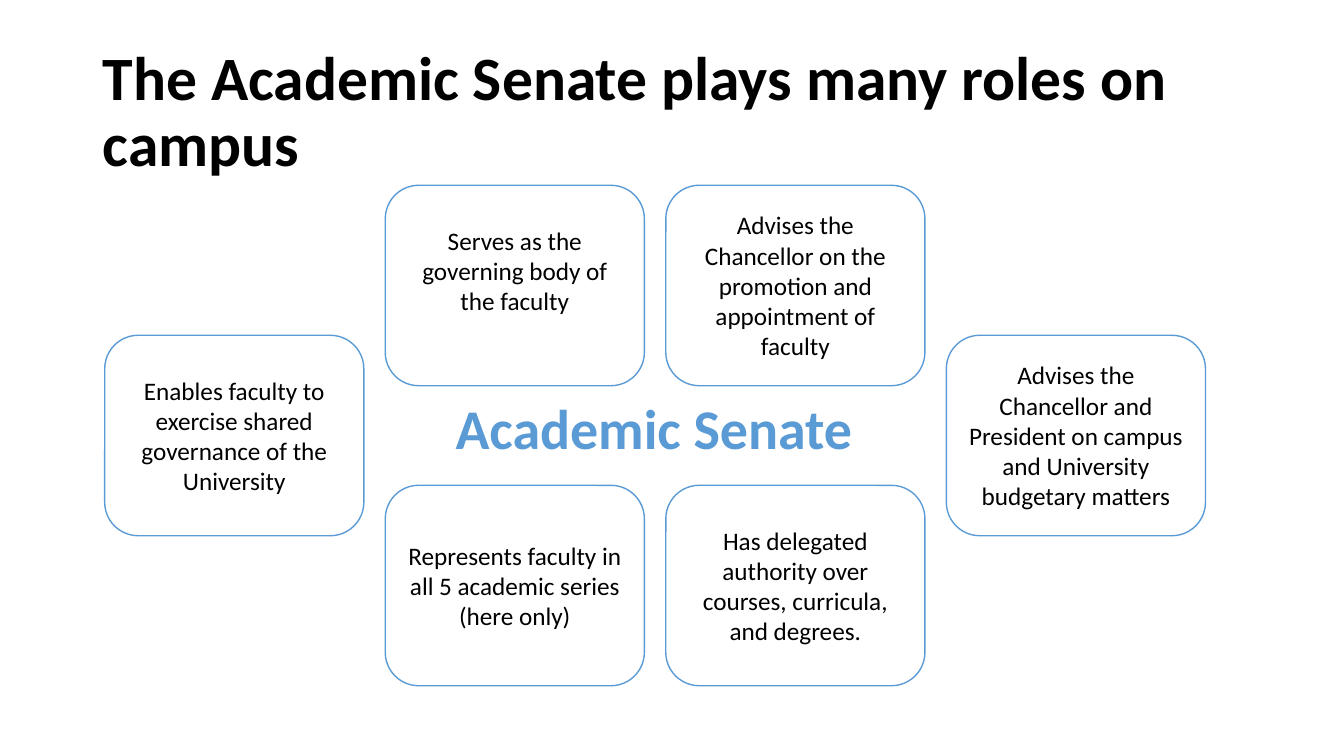
from dataclasses import dataclass

from pptx import Presentation
from pptx.dml.color import RGBColor
from pptx.enum.shapes import MSO_SHAPE
from pptx.enum.text import MSO_ANCHOR, PP_ALIGN
from pptx.shapes.autoshape import Shape
from pptx.slide import Slide
from pptx.util import Cm, Pt

BLACK = RGBColor(0x00, 0x00, 0x00)
WHITE = RGBColor(0xFF, 0xFF, 0xFF)
BLUE = RGBColor(0x5B, 0x9B, 0xD5)
FONT = "Calibri"

GRID_LEFT, GRID_TOP = 2.64, 4.67
COL_STEP, ROW_STEP = 7.07, 3.78
BOX_WIDTH, BOX_HEIGHT = 6.53, 5.05


@dataclass(frozen=True)
class Role:
    col: int
    row: int
    text: str
    bottom_inset: float = 0.13


ROLES = [
    Role(0, 1, "Enables faculty to exercise shared governance of the University"),
    Role(2, 0, "Advises the Chancellor on the promotion and appointment of faculty"),
    Role(2, 2, "Has delegated authority over courses, curricula, and degrees."),
    Role(3, 1, "Advises the Chancellor and President on campus and University budgetary matters"),
    Role(1, 2, "Represents faculty in all 5 academic series (here only)"),
    Role(1, 0, "Serves as the governing body of the faculty", bottom_inset=0.89),
]


def set_text(sp: Shape, text: str, *, size: float, color: RGBColor = BLACK,
             bold: bool = False, align: PP_ALIGN = PP_ALIGN.CENTER,
             anchor: MSO_ANCHOR = MSO_ANCHOR.MIDDLE, spacing: float = 1.0) -> None:
    tf = sp.text_frame
    tf.word_wrap = True
    tf.vertical_anchor = anchor
    p = tf.paragraphs[0]
    p.alignment = align
    p.line_spacing = spacing
    r = p.add_run()
    r.text = text
    r.font.name = FONT
    r.font.size = Pt(size)
    r.font.bold = bold
    r.font.color.rgb = color


def add_title(s: Slide) -> None:
    sp = s.shapes.add_textbox(Cm(2.34), Cm(1.02), Cm(29.21), Cm(3.68))
    set_text(sp, "The Academic Senate plays many roles on campus",
             size=44, bold=True, align=PP_ALIGN.LEFT, spacing=0.9)


def add_role(s: Slide, role: Role) -> None:
    sp = s.shapes.add_shape(
        MSO_SHAPE.ROUNDED_RECTANGLE,
        Cm(GRID_LEFT + role.col * COL_STEP), Cm(GRID_TOP + role.row * ROW_STEP),
        Cm(BOX_WIDTH), Cm(BOX_HEIGHT))
    sp.shadow.inherit = False
    sp.fill.solid()
    sp.fill.fore_color.rgb = WHITE
    sp.line.color.rgb = BLUE
    sp.line.width = Pt(1)
    sp.text_frame.margin_bottom = Cm(role.bottom_inset)
    set_text(sp, role.text, size=18)


def add_center_label(s: Slide) -> None:
    sp = s.shapes.add_textbox(Cm(9.8), Cm(9.92), Cm(13.36), Cm(1.7))
    tf = sp.text_frame
    tf.margin_left = tf.margin_right = tf.margin_top = tf.margin_bottom = 0
    set_text(sp, "Academic Senate", size=40, color=BLUE, bold=True,
             anchor=MSO_ANCHOR.TOP)


def main() -> None:
    prs = Presentation()
    prs.slide_width, prs.slide_height = Cm(33.87), Cm(19.05)
    s = prs.slides.add_slide(prs.slide_layouts[6])
    add_title(s)
    for role in ROLES:
        add_role(s, role)
    add_center_label(s)
    prs.save("out.pptx")


if __name__ == "__main__":
    main()
